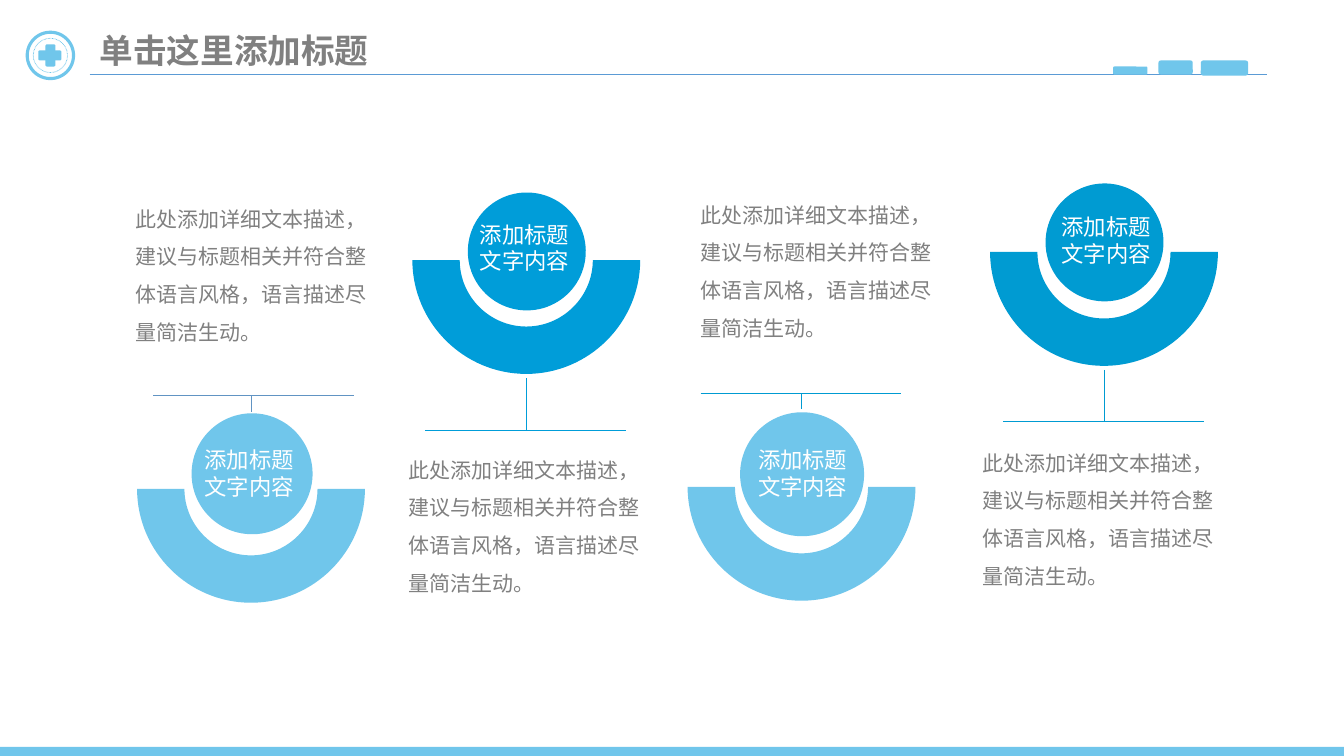
import dataclasses

import lxml.etree
import pptx
import pptx.dml.color
import pptx.enum.dml
import pptx.enum.shapes
import pptx.enum.text
import pptx.oxml.ns
import pptx.util

SHAPE = pptx.enum.shapes.MSO_SHAPE


@dataclasses.dataclass(frozen=True)
class Theme:
    sky: str = "70C6EB"
    azure: str = "009DD9"
    ocean: str = "009BD2"
    steel: str = "6194C3"
    rule: str = "5B9BD5"
    grey: str = "808080"
    white: str = "FFFFFF"
    font: str = "Noto Sans CJK SC"
    label_font: str = "Noto Sans Mono"
    title_size: int = 24
    label_size: int = 16
    body_size: int = 15
    hairline: float = 0.5
    ring: float = 2.25


class Painter:
    """Draws themed elements on one page, with lengths in px at 100 to the inch."""

    scale = 9144
    roundness = 0.55

    def __init__(self, page, theme):
        self.page = page
        self.theme = theme
        self.shapes = page.shapes

    def open_group(self):
        self.shapes = self.page.shapes.add_group_shape().shapes

    def close_group(self):
        self.shapes = self.page.shapes

    def emu(self, *lengths):
        return [pptx.util.Emu(round(length * self.scale)) for length in lengths]

    def color(self, value):
        return pptx.dml.color.RGBColor.from_string(value)

    def fill(self, shape, color):
        shape.shadow.inherit = False
        shape.fill.solid()
        shape.fill.fore_color.rgb = self.color(color)
        shape.line.fill.background()

    def solid(self, kind, box, color, rotation=0):
        shape = self.shapes.add_shape(kind, *self.emu(*box))
        self.fill(shape, color)
        shape.rotation = rotation
        return shape

    def ring(self, box, color, width, dash=None):
        shape = self.solid(SHAPE.OVAL, box, color)
        shape.fill.background()
        shape.line.color.rgb = self.color(color)
        shape.line.width = pptx.util.Pt(width)
        shape.line.dash_style = dash

    def bowl(self, center_x, top, outer, inner, color):
        def half_circle(radius):
            pull = self.roundness
            unit = ((-1, 0), (-1, pull), (-pull, 1), (0, 1), (pull, 1), (1, pull), (1, 0))
            return [self.emu(center_x + radius * x, top + radius * y) for x, y in unit]

        points = half_circle(outer)[:1] + half_circle(inner) + half_circle(outer)[::-1]
        builder = self.shapes.build_freeform(*points[0], scale=1.0)
        builder.add_line_segments(points[1:], close=True)
        shape = builder.convert_to_shape()
        self.fill(shape, color)
        steps = list(shape._element.iter(pptx.oxml.ns.qn("a:lnTo")))
        for first in (1, 4, 8, 11):
            curve = lxml.etree.Element(pptx.oxml.ns.qn("a:cubicBezTo"))
            steps[first].addprevious(curve)
            for step in steps[first:first + 3]:
                curve.append(step[0])
                step.getparent().remove(step)

    def line(self, ends, color):
        connector = self.shapes.add_connector(
            pptx.enum.shapes.MSO_CONNECTOR.STRAIGHT, *self.emu(*ends)
        )
        connector.line.color.rgb = self.color(color)
        connector.line.width = pptx.util.Pt(self.theme.hairline)
        lxml.etree.SubElement(
            connector._element.spPr, pptx.oxml.ns.qn("a:effectLst")
        )

    def text(self, box, words, size, color, font, bold=False,
             wrap=False, insets=(10, 5), spacing=None):
        frame = self.shapes.add_textbox(*self.emu(*box)).text_frame
        frame.word_wrap = wrap
        frame.auto_size = pptx.enum.text.MSO_AUTO_SIZE.SHAPE_TO_FIT_TEXT
        side, end = self.emu(*insets)
        frame.margin_left = frame.margin_right = side
        frame.margin_top = frame.margin_bottom = end
        frame.text = words
        for para in frame.paragraphs:
            para.line_spacing = spacing
            for span in para.runs:
                span.font.size = pptx.util.Pt(size)
                span.font.bold = bold
                span.font.color.rgb = self.color(color)
                span.font.name = font
                lxml.etree.SubElement(
                    span._r.get_or_add_rPr(), pptx.oxml.ns.qn("a:ea"), typeface=font
                )

    def header(self, title):
        theme = self.theme
        self.text((89, 25, 289, 50), title, theme.title_size, theme.grey,
                  theme.font, bold=True)
        self.open_group()
        self.ring((27, 32, 46, 46), theme.sky, theme.ring)
        self.ring((33, 38, 34, 34), theme.sky, theme.hairline,
                  pptx.enum.dml.MSO_LINE.ROUND_DOT)
        for left, width, rotation in ((39, 22, 90), (38, 23, 0)):
            self.solid(SHAPE.ROUNDED_RECTANGLE, (left, 50, width, 10), theme.sky, rotation)
        self.close_group()
        self.line((89, 74, 1257, 74), theme.rule)
        for block in ((1104, 66, 34, 8), (1149, 60, 34, 14), (1191, 60, 47, 15)):
            self.solid(SHAPE.ROUNDED_RECTANGLE, block, theme.sky)

    def footer(self):
        self.solid(SHAPE.RECTANGLE, (0, 741, 1333, 9), self.theme.sky)

    def station(self, center_x, bowl_top, circle, bar, stem, label,
                color, line_color, heading):
        theme = self.theme
        circle_top, diameter = circle
        bar_left, bar_y = bar
        self.open_group()
        self.bowl(center_x, bowl_top, 113, 66, color)
        self.solid(SHAPE.OVAL,
                   (center_x - (diameter - 1) // 2, circle_top, diameter, diameter),
                   color, 21.1)
        self.line((bar_left, bar_y, bar_left + 199, bar_y), line_color)
        self.line((center_x, stem[0], center_x, stem[1]), line_color)
        self.text((*label, 110, 64), heading, theme.label_size, theme.white,
                  theme.label_font)
        self.close_group()

    def body(self, left, top, description):
        self.text((left, top, 268, 160), description, self.theme.body_size,
                  self.theme.grey, self.theme.font, wrap=True, insets=(13, 7),
                  spacing=1.5)


def main():
    deck = pptx.Presentation()
    deck.slide_width, deck.slide_height = (
        pptx.util.Emu(side * Painter.scale) for side in (1333, 750)
    )
    theme = Theme()
    painter = Painter(deck.slides.add_slide(deck.slide_layouts[6]), theme)
    painter.header("单击这里添加标题")
    painter.footer()
    heading = "添加标题\n文字内容"
    description = "此处添加详细文本描述，建议与标题相关并符合整体语言风格，语言描述尽量简洁生动。"
    stations = (
        (249, 485, (410, 120), (152, 392), (392, 409), (193, 438), theme.sky, theme.steel),
        (522, 258, (191, 117), (422, 427), (375, 427), (466, 214), theme.azure, theme.azure),
        (795, 483, (409, 123), (695, 390), (390, 406), (742, 438), theme.sky, theme.ocean),
        (1095, 250, (182, 117), (995, 418), (367, 418), (1043, 207), theme.ocean, theme.ocean),
    )
    for station in stations:
        painter.station(*station, heading)
    for left, top in ((121, 185), (392, 434), (682, 181), (961, 427)):
        painter.body(left, top, description)
    deck.save("out.pptx")


if __name__ == "__main__":
    main()
